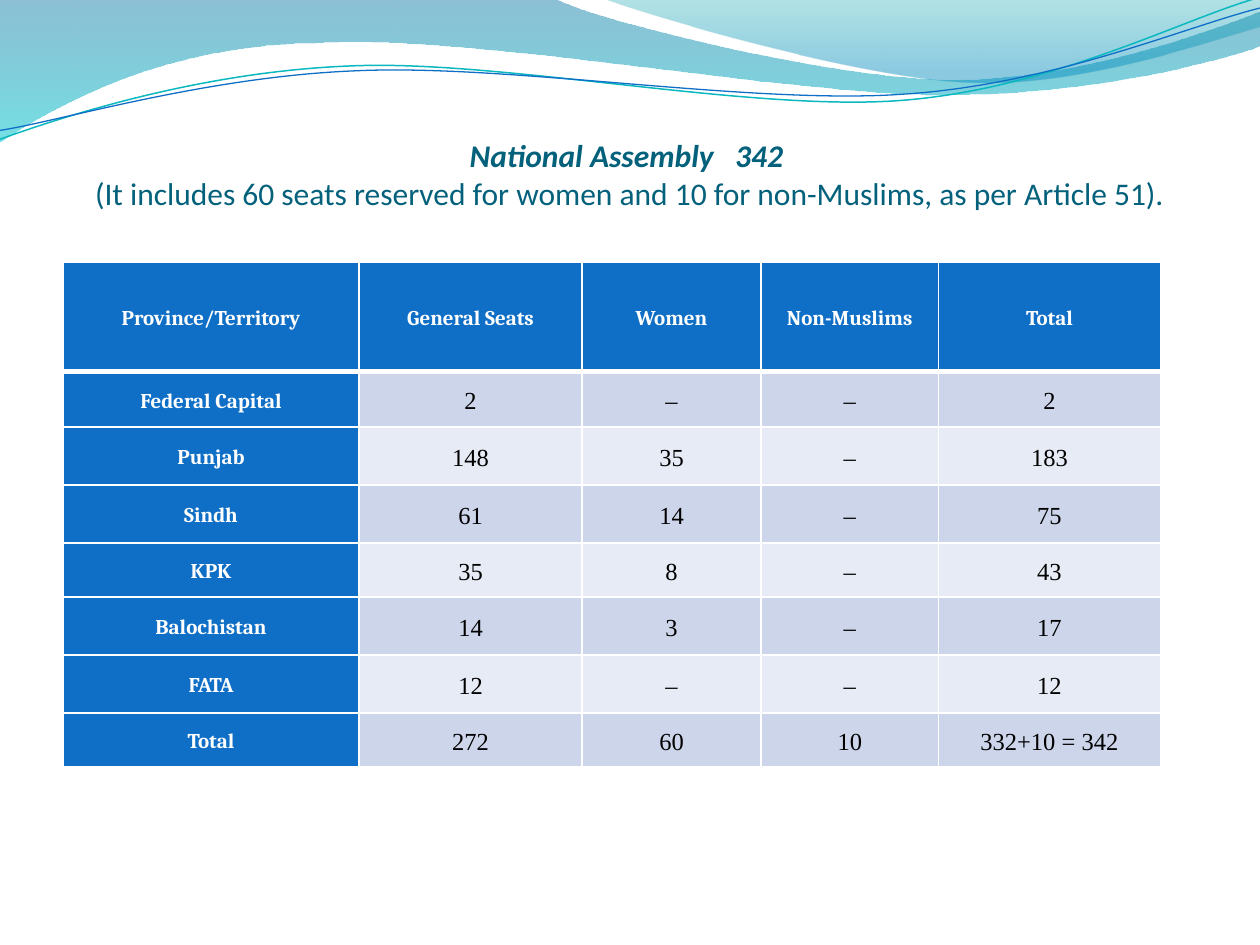
from lxml import etree
from pptx import Presentation
from pptx.dml.color import RGBColor
from pptx.enum.text import MSO_ANCHOR, PP_ALIGN
from pptx.oxml.ns import qn
from pptx.util import Inches, Pt

CENTER = PP_ALIGN.CENTER
MIDDLE = MSO_ANCHOR.MIDDLE
BOTTOM = MSO_ANCHOR.BOTTOM
COLUMN = ROW = Inches(1)
DOWNWARD = 270


def color(hex_string):
    return RGBColor.from_string(hex_string)


def draw_wave(shapes, start, segments, closed):
    points = [start]
    for segment in segments:
        points += zip(segment[::2], segment[1::2])
    scaled = [(round(x * COLUMN), round(y * ROW)) for x, y in points]
    builder = shapes.build_freeform(*scaled[0])
    builder.add_line_segments(scaled[1:], close=closed)
    wave = builder.convert_to_shape()
    wave.shadow.inherit = False
    steps = iter(list(wave.element.iter(qn("a:lnTo"))))
    for segment in segments:
        step = next(steps)
        if len(segment) == 6:
            step.addprevious(curve := etree.Element(qn("a:cubicBezTo")))
            for handle in (step, next(steps), next(steps)):
                curve.append(handle[0])
                handle.getparent().remove(handle)
    return wave


deck = Presentation()
deck.slide_width = 10 * COLUMN
deck.slide_height = round(7.5 * ROW)
page = deck.slides.add_slide(deck.slide_layouts[6])

bands = [
    ((0, -0.01),
     [(4.4, -0.01), (4.76, 0.17, 6.64, 0.63, 7.58, 0.63), (8.53, 0.63, 9.58, 0.26, 10, 0.09),
      (10.01, 0.36), (9.83, 0.44, 8.7, 0.76, 7.46, 0.75), (6.22, 0.75, 3.82, 0.28, 2.57, 0.34),
      (1.29, 0.35, 0.46, 0.83, -0.01, 1.13)],
     [(0, "0074A1", 45), (1, "00C6CF", 55)]),
    ((4.79, -0.01),
     [(5.09, 0.11, 6.82, 0.62, 7.69, 0.65), (8.56, 0.69, 9.61, 0.32, 10, 0.21), (10, 0)],
     [(0, "00A1A9", 30), (0.8, "008BBF", 45)]),
]
for start, segments, stops in bands:
    band = draw_wave(page.shapes, start, segments, True)
    band.fill.gradient()
    band.fill.gradient_angle = DOWNWARD
    for stop, (position, shade, _) in zip(band.fill.gradient_stops, stops):
        stop.position = position
        stop.color.rgb = color(shade)
    for tint, (_, _, opacity) in zip(band.element.iter(qn("a:srgbClr")), stops):
        etree.SubElement(tint, qn("a:alpha")).set("val", str(opacity * 1000))
    band.line.fill.background()

ripples = [
    ((-0.02, 0.87),
     [(0.47, 0.72, 1.58, 0.41, 2.78, 0.42), (3.96, 0.42, 5.91, 0.93, 7.12, 0.9),
      (8.32, 0.87, 9.4, 0.36, 10, 0.22)], "0AB8BF", 0.85),
    ((-0.02, 0.8),
     [(0.46, 0.75, 1.64, 0.45, 2.83, 0.46), (4.03, 0.46, 5.96, 0.88, 7.16, 0.85),
      (8.35, 0.83, 9.42, 0.42, 10.02, 0.3)], "0F6FC6", 0.75),
]
ripple_group = page.shapes.add_group_shape()
for start, segments, shade, weight in ripples:
    ripple = draw_wave(ripple_group.shapes, start, segments, False)
    ripple.rotation = 357.3
    ripple.fill.background()
    ripple.line.color.rgb = color(shade)
    ripple.line.width = Pt(weight)

title = page.shapes.add_textbox(
    round(0.5 * COLUMN), round(0.83 * ROW), 9 * COLUMN, round(1.08 * ROW))
frame = title.text_frame
frame.word_wrap = True
frame.vertical_anchor = BOTTOM
frame.margin_left = frame.margin_right = 0
frame.margin_top = round(0.05 * ROW)
frame.margin_bottom = round(0.23 * ROW)
heading = frame.paragraphs[0]
heading.alignment = CENTER
heading.font.name = "Calibri"
heading.font.size = Pt(18)
heading.font.color.rgb = color("04617B")
for words in ("National Assembly", " ", "342 "):
    span = heading.add_run()
    span.text = words
    span.font.bold = span.font.italic = True
    if words == " ":
        span.font._element.set("spc", "800")
heading.add_line_break()
span = heading.add_run()
span.text = "(It includes 60 seats reserved for women and 10 for non-Muslims, as per Article 51)."

seats = [
    ("Province/Territory", "General Seats", "Women", "Non-Muslims", "Total"),
    ("Federal Capital", "2", "–", "–", "2"),
    ("Punjab", "148", "35", "–", "183"),
    ("Sindh", "61", "14", "–", "75"),
    ("KPK", "35", "8", "–", "43"),
    ("Balochistan", "14", "3", "–", "17"),
    ("FATA", "12", "–", "–", "12"),
    ("Total", "272", "60", "10", "332+10 = 342"),
]
widths = [2.35, 1.77, 1.42, 1.41, 1.76]
heights = [0.87, 0.44, 0.46, 0.46, 0.43, 0.46, 0.46, 0.43]
table = page.shapes.add_table(
    len(seats), len(widths), round(0.5 * COLUMN), round(2.08 * ROW),
    round(sum(widths) * COLUMN), round(sum(heights) * ROW)).table
for column, width in zip(table.columns, widths):
    column.width = round(width * COLUMN)
for row, height in zip(table.rows, heights):
    row.height = round(height * ROW)

for r, record in enumerate(seats):
    for c, value in enumerate(record):
        cell = table.cell(r, c)
        is_header = r == 0 or c == 0
        properties = cell._tc.get_or_add_tcPr()
        for side in "LRTB":
            thick = (r, side) in ((0, "B"), (1, "T"))
            border = etree.SubElement(properties, qn("a:ln" + side))
            border.set("w", str(Pt(3 if thick else 1)))
            ink = etree.SubElement(border, qn("a:solidFill"))
            etree.SubElement(ink, qn("a:srgbClr")).set("val", "FFFFFF")
        cell.fill.solid()
        cell.fill.fore_color.rgb = color(
            "0F6FC6" if is_header else "CCD5EA" if r % 2 else "E7EBF5")
        cell.vertical_anchor = MIDDLE
        cell.margin_left = cell.margin_right = round(0.01 * COLUMN)
        cell.margin_top = cell.margin_bottom = round(0.01 * ROW)
        cell.text = value
        para = cell.text_frame.paragraphs[0]
        para.alignment = CENTER
        para.line_spacing = 1.15
        para.font.name = "Cambria" if is_header else "Times New Roman"
        para.font.size = Pt(12 if is_header else 14)
        para.font.bold = is_header
        para.font.color.rgb = color("FFFFFF" if is_header else "000000")

deck.save("out.pptx")
